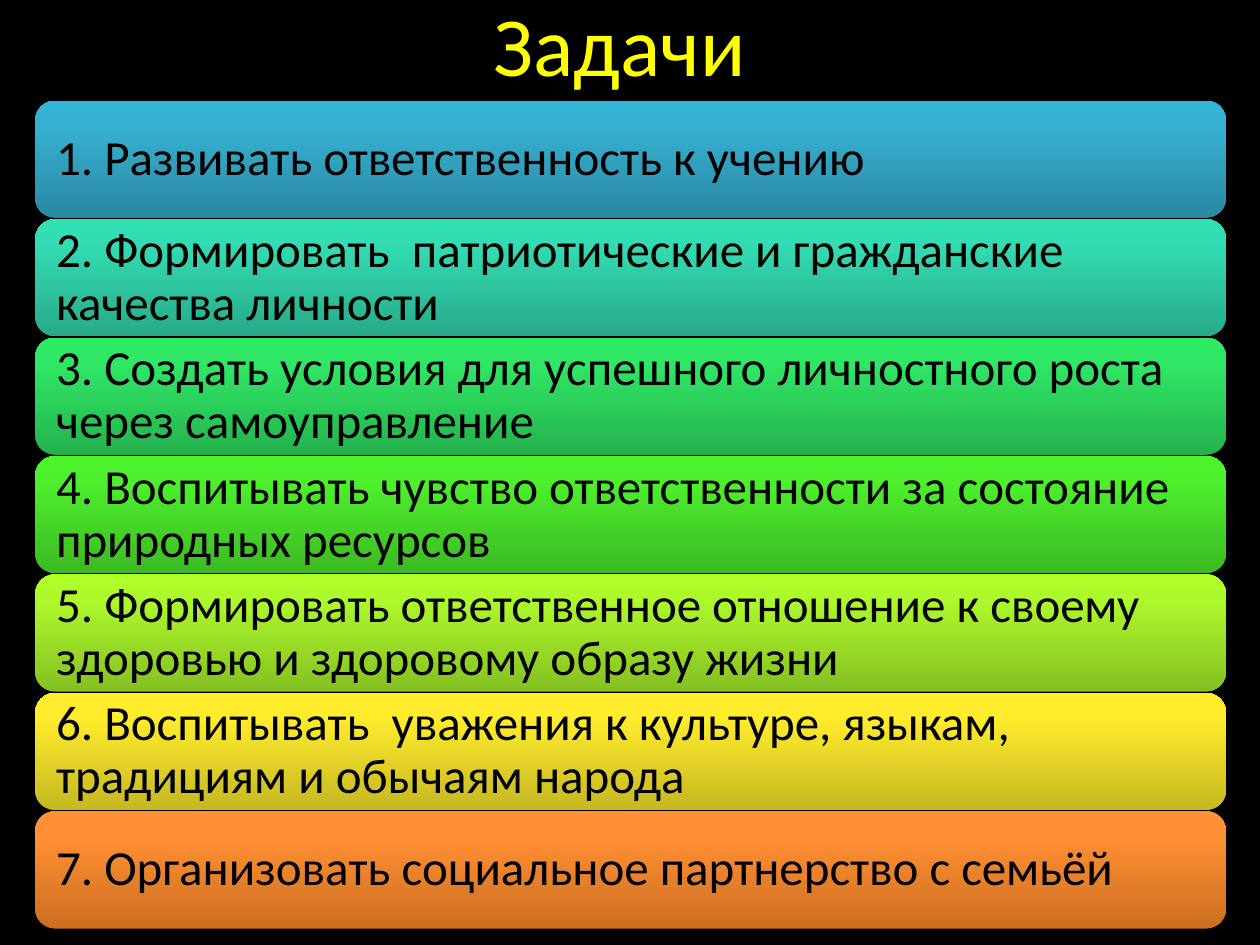
from copy import deepcopy
from dataclasses import dataclass

from lxml import etree
from pptx import Presentation
from pptx.dml.color import RGBColor
from pptx.enum import shapes, text
from pptx.oxml import ns
from pptx.util import Inches, Pt

BLACK = RGBColor(0x00, 0x00, 0x00)
YELLOW = RGBColor(0xFF, 0xFF, 0x00)
FONT = "Calibri"

BAR_LEFT, BAR_TOP = 0.28, 0.8
BAR_WIDTH, BAR_HEIGHT = 9.45, 0.93
BAR_PITCH = 0.94
INSET = Inches(0.12)
STOP_POSITIONS = (0, 0.8, 1)


@dataclass(frozen=True)
class Task:
    wording: str
    dark: RGBColor
    light: RGBColor
    lightest: RGBColor


def task(wording: str, *colours: str) -> Task:
    return Task(wording, *(RGBColor.from_string(colour) for colour in colours))


TASKS = (
    task("1. Развивать ответственность к учению", "2A88A2", "37B1D2", "34B4D6"),
    task("2. Формировать  патриотические и гражданские качества личности",
         "27AA89", "33DCB2", "30E1B5"),
    task("3. Создать условия для успешного личностного роста через самоуправление",
         "25B24E", "30E765", "2DEB64"),
    task("4. Воспитывать чувство ответственности за состояние природных ресурсов",
         "3CB923", "4EF02E", "4CF52A"),
    task("5. Формировать ответственное отношение к своему здоровью и здоровому образу жизни",
         "85C022", "ADF92C", "AFFE28"),
    task("6. Воспитывать  уважения к культуре, языкам, традициям и обычаям народа",
         "C6B821", "FFEC2D", "FFED2E"),
    task("7. Организовать социальное партнерство с семьёй", "CC6E20", "FF9034", "FF9136"),
)


def add_span(para, wording: str, size: int, colour: RGBColor) -> None:
    span = para.add_run()
    span.text = wording
    span.font.name = FONT
    span.font.size = Pt(size)
    span.font.color.rgb = colour


def fill_gradient(bar, colours: tuple) -> None:
    """Three stops running from the bottom edge to the top."""
    bar.fill.gradient()
    bar.fill.gradient_angle = 90
    stop_list = bar._element.spPr.find(".//" + ns.qn("a:gsLst"))
    stop_list.append(deepcopy(stop_list[-1]))
    for stop, position, colour in zip(bar.fill.gradient_stops, STOP_POSITIONS, colours):
        stop.position = position
        stop.color.rgb = colour


def add_shadow(bar) -> None:
    bar.shadow.inherit = False
    effects = bar._element.spPr.find(ns.qn("a:effectLst"))
    shadow = etree.SubElement(effects, ns.qn("a:outerShdw"), blurRad=str(Pt(3.1)),
                              dist=str(Pt(1.8)), dir="5400000", rotWithShape="0")
    colour = etree.SubElement(shadow, ns.qn("a:srgbClr"), val=str(BLACK))
    etree.SubElement(colour, ns.qn("a:alpha"), val="35000")


def add_bar(page, item: Task, top: float) -> None:
    bar = page.shapes.add_shape(shapes.MSO_SHAPE.ROUNDED_RECTANGLE, Inches(BAR_LEFT),
                                Inches(top), Inches(BAR_WIDTH), Inches(BAR_HEIGHT))
    fill_gradient(bar, (item.dark, item.light, item.lightest))
    bar.line.fill.background()
    add_shadow(bar)
    frame = bar.text_frame
    frame.word_wrap = True
    frame.vertical_anchor = text.MSO_ANCHOR.MIDDLE
    frame.margin_left = frame.margin_right = INSET
    frame.margin_top = frame.margin_bottom = INSET
    para = frame.paragraphs[0]
    para.alignment = text.PP_ALIGN.LEFT
    para.line_spacing = 0.9
    add_span(para, item.wording, 28, BLACK)


def add_title(page) -> None:
    box = page.shapes.add_textbox(Inches(3.82), Inches(-0.11), Inches(2.22), Inches(0.91))
    box.text_frame.word_wrap = False
    box.text_frame.auto_size = text.MSO_AUTO_SIZE.SHAPE_TO_FIT_TEXT
    add_span(box.text_frame.paragraphs[0], "Задачи", 48, YELLOW)


def main() -> None:
    deck = Presentation()
    deck.slide_width, deck.slide_height = Inches(10), Inches(7.5)
    page = deck.slides.add_slide(deck.slide_layouts[6])
    page.background.fill.solid()
    page.background.fill.fore_color.rgb = BLACK
    for index, item in enumerate(TASKS):
        add_bar(page, item, BAR_TOP + index * BAR_PITCH)
    add_title(page)
    deck.save("out.pptx")


if __name__ == "__main__":
    main()
